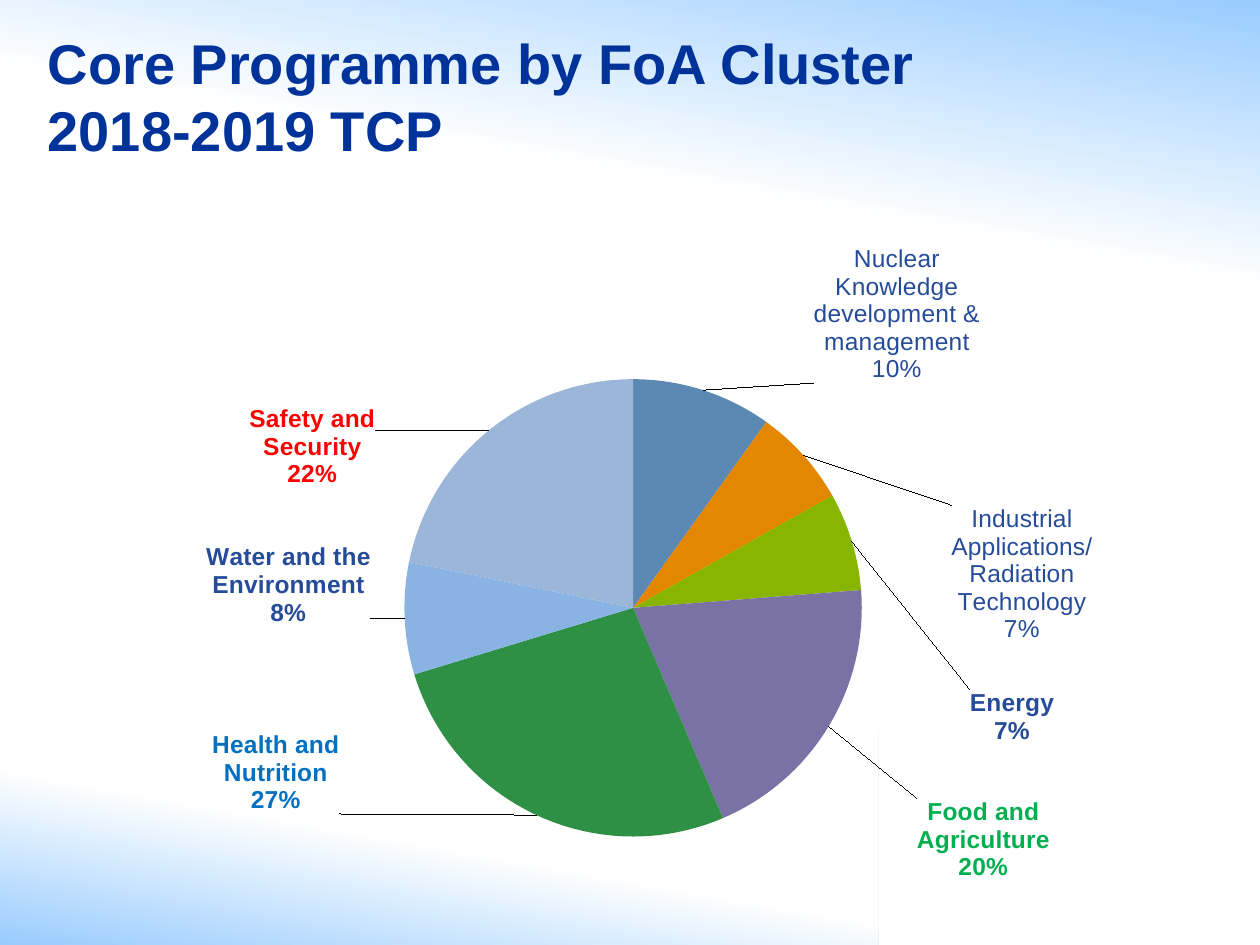
from lxml import etree
from pptx import Presentation
from pptx.chart.data import CategoryChartData
from pptx.dml.color import RGBColor
from pptx.enum.chart import XL_CHART_TYPE as ChartType, XL_LABEL_POSITION as LabelPos
from pptx.enum.shapes import MSO_SHAPE as Shape
from pptx.enum.text import MSO_ANCHOR as Anchor
from pptx.oxml import parse_xml
from pptx.oxml.ns import nsdecls, qn
from pptx.util import Inches, Pt

COLORS = {
    "title": "003399", "text": "264C99", "sky": "99CCFF", "white": "FFFFFF",
    "food": "00B050", "health": "0070C0", "safety": "FF0000",
}
FONT = "Arial"

SLICES = [
    ("Nuclear Knowledge development and management", 10, "5B89B4", "text", 0.86, 0,
     "Nuclear Knowledge development & management\n10%"),
    ("Industrial Applications/Radiation Technology", 7, "E38700", "text", 1.13, 1.53,
     "Industrial Applications/ Radiation Technology\n7%"),
    ("Energy", 7, "88B500", "text", 0.88, 1.63, None),
    ("Food and Agriculture", 20, "7A72A4", "food", 0.65, 0.54, None),
    ("Health and Nutrition", 27, "2E9045", "health", -1.54, -0.72, None),
    ("Water and the Environment", 8, "88B3E3", "text", -0.21, -0.27, None),
    ("Safety and Security", 22, "9CB6DA", "safety", -0.86, 0.5, None),
]
CHART_W, CHART_H = 7.8, 5.59
PIE_X, PIE_Y, PIE_SIZE = 2.3, 1.23, 3.63


def layout_xml(x, y, size=None):
    values = {"x": x / CHART_W, "y": y / CHART_H}
    target = ""
    if size:
        values.update(w=size / CHART_W, h=size / CHART_H)
        target = '<c:layoutTarget val="inner"/><c:xMode val="edge"/><c:yMode val="edge"/>'
    parts = "".join(f'<c:{k} val="{v:.4f}"/>' for k, v in values.items())
    return parse_xml(f'<c:layout {nsdecls("c")}><c:manualLayout>{target}{parts}</c:manualLayout></c:layout>')


class Deck:
    def __init__(self, prs):
        self.s = prs.slides.add_slide(prs.slide_layouts[6])

    def style(self, font, size, color, bold):
        font.name, font.size, font.bold = FONT, Pt(size), bold
        font.color.rgb = RGBColor.from_string(COLORS[color])

    def glow(self, x, y, w, h, angle, fade):
        sp = self.s.shapes.add_shape(Shape.RECTANGLE, Inches(x), Inches(y), Inches(w), Inches(h))
        sp.shadow.inherit = False
        sp.line.fill.background()
        sp.fill.gradient()
        sp.fill.gradient_angle = angle
        for stop, pos, color in zip(sp.fill.gradient_stops, (0, fade), ("sky", "white")):
            stop.position = pos
            stop.color.rgb = RGBColor.from_string(COLORS[color])

    def title(self, text, x, y, w, h):
        tf = self.s.shapes.add_textbox(Inches(x), Inches(y), Inches(w), Inches(h)).text_frame
        tf.word_wrap = True
        tf.vertical_anchor = Anchor.MIDDLE
        p = tf.paragraphs[0]
        p.text = text
        self.style(p.font, 32, "title", True)

    def pie(self, x, y):
        data = CategoryChartData()
        data.categories = [row[0] for row in SLICES]
        data.add_series("Series 1", [row[1] for row in SLICES])
        chart = self.s.shapes.add_chart(
            ChartType.PIE, Inches(x), Inches(y), Inches(CHART_W), Inches(CHART_H), data).chart
        chart.has_legend = chart.has_title = False
        self.style(chart.font, 20, "text", False)
        plot = chart.plots[0]
        plot.vary_by_categories = True
        series = plot.series[0]
        labels = series.data_labels
        labels.show_value = False
        labels.show_category_name = labels.show_percentage = True
        labels.number_format, labels.number_format_is_linked = "0%", False
        labels.position = LabelPos.OUTSIDE_END
        self.style(labels.font, 14, "text", True)
        for i, (_, _, fill, color, _, _, text) in enumerate(SLICES):
            point = series.points[i]
            point.format.fill.solid()
            point.format.fill.fore_color.rgb = RGBColor.from_string(fill)
            label = point.data_label
            if text:
                label.text_frame.text = text
                for p in label.text_frame.paragraphs:
                    for r in p.runs:
                        self.style(r.font, 14, color, False)
            else:
                self.style(label.font, 14, color, True)
            label.position = LabelPos.OUTSIDE_END
        self.place_labels(series._element.find(qn("c:dLbls")))
        area = chart._chartSpace.find(".//" + qn("c:plotArea"))
        for old in area.findall(qn("c:layout")):
            area.remove(old)
        area.insert(0, layout_xml(PIE_X, PIE_Y, PIE_SIZE))

    def place_labels(self, group):
        for label, row in zip(group.findall(qn("c:dLbl")), SLICES):
            layout = layout_xml(row[4], row[5])
            label.find(qn("c:idx")).addnext(layout)
            tx = label.find(qn("c:tx"))
            before = layout if tx is None else tx
            before.addnext(parse_xml(f'<c:numFmt {nsdecls("c")} formatCode="0%" sourceLinked="0"/>'))
            for tag, val in (("showVal", "0"), ("showCatName", "1"), ("showPercent", "1")):
                label.find(qn(f"c:{tag}")).set("val", val)
            self.add_separator(label)
        self.add_separator(group)
        lines = group.find(qn("c:showLeaderLines"))
        if lines is None:
            lines = etree.SubElement(group, qn("c:showLeaderLines"))
        lines.set("val", "1")

    def add_separator(self, parent):
        separator = parse_xml(f'<c:separator {nsdecls("c")}/>')
        separator.text = "\n"
        bubble = parent.find(qn("c:showBubbleSize"))
        last = parent.find(qn("c:showPercent")) if bubble is None else bubble
        last.addnext(separator)


def main():
    prs = Presentation()
    prs.slide_width, prs.slide_height = Inches(10), Inches(7.5)
    deck = Deck(prs)
    deck.glow(0, 5.8, 6.97, 1.7, 80, 0.48)
    deck.glow(0, 0, 10, 2.33, 260, 0.56)
    deck.title("Core Programme by FoA Cluster 2018-2019 TCP", 0.28, 0.29, 7.32, 0.94)
    deck.pie(0.91, 1.78)
    prs.save("out.pptx")


if __name__ == "__main__":
    main()
